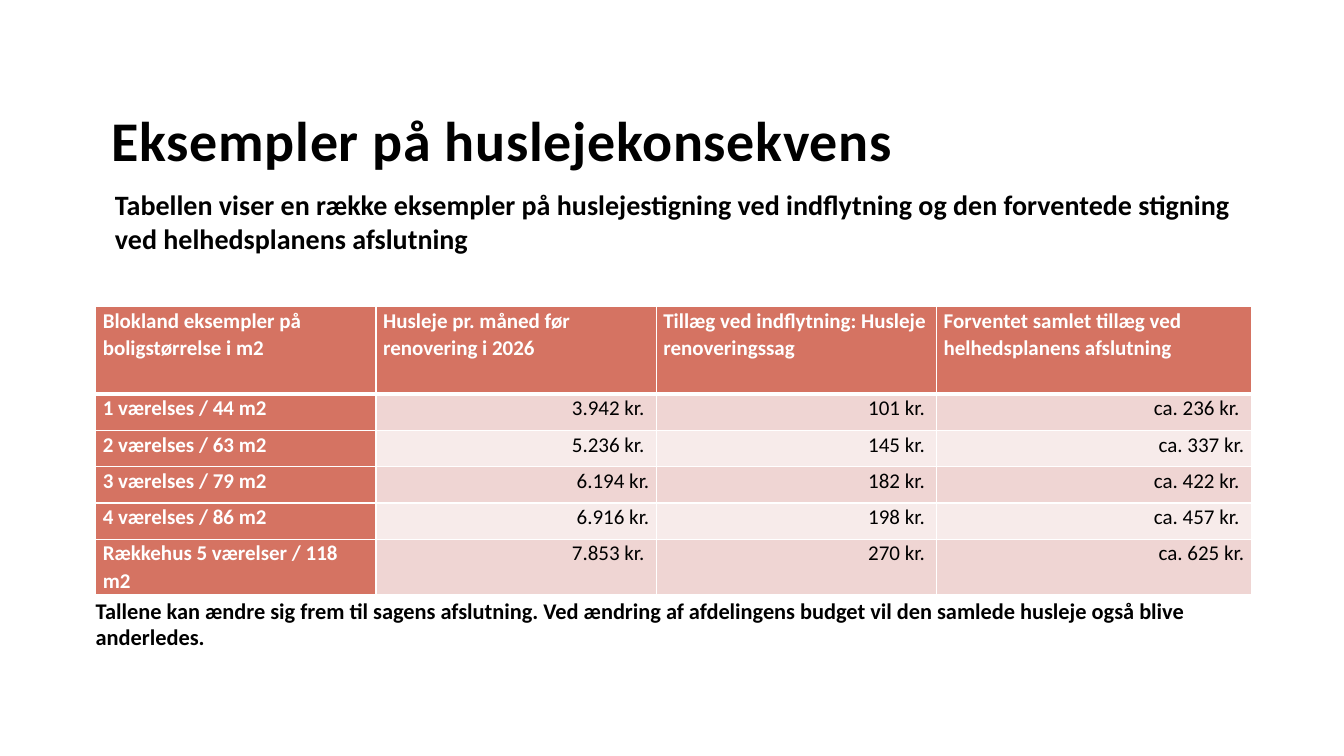
from lxml.etree import SubElement
from pptx import Presentation
from pptx.dml.color import RGBColor
from pptx.enum.text import MSO_ANCHOR, MSO_AUTO_SIZE, PP_ALIGN
from pptx.oxml.ns import qn
from pptx.util import Inches, Pt

COLORS = {"text": "000000", "white": "FFFFFF", "head": "D57362",
          "dark": "EFD5D3", "light": "F7EBEA"}
WIDTHS = [2.78, 2.78, 2.78, 3.12]
HEAD_H, ROW_H = 0.87, 0.36
ROWS = [
    ["Blokland eksempler på boligstørrelse i m2",
     "Husleje pr. måned før renovering i 2026",
     "Tillæg ved indflytning: Husleje renoveringssag",
     "Forventet samlet tillæg ved helhedsplanens afslutning"],
    ["1 værelses / 44 m2", "3.942 kr. ", "101 kr. ", "ca. 236 kr. "],
    ["2 værelses / 63 m2", "5.236 kr. ", "145 kr. ", "ca. 337 kr."],
    ["3 værelses / 79 m2", "6.194 kr.", "182 kr. ", "ca. 422 kr. "],
    ["4 værelses / 86 m2", "6.916 kr.", "198 kr. ", "ca. 457 kr. "],
    ["Rækkehus 5 værelser / 118 m2", "7.853 kr. ", "270 kr. ", "ca. 625 kr."],
]


def rgb(name):
    return RGBColor.from_string(COLORS[name])


def write(frame, text, size, color="text", bold=True, align=PP_ALIGN.LEFT,
          line=None, after=None, track=None):
    """Put one formatted paragraph into a text frame."""
    para = frame.paragraphs[0]
    para.alignment = align
    para.line_spacing = line
    if after is not None:
        para.space_after = Pt(after)
    run = para.add_run()
    run.text = text
    font = run.font
    font.name, font.size, font.bold = "Calibri", Pt(size), bold
    font.color.rgb = rgb(color)
    if track:
        run._r.get_or_add_rPr().set("spc", str(int(track * 100)))


def place(shape, left, top, width, height):
    """Position a text shape and clear its insets."""
    shape.left, shape.top = Inches(left), Inches(top)
    shape.width, shape.height = Inches(width), Inches(height)
    frame = shape.text_frame
    frame.margin_left = frame.margin_right = 0
    frame.margin_top = frame.margin_bottom = 0
    frame.word_wrap = True
    frame.auto_size = MSO_AUTO_SIZE.NONE
    frame.vertical_anchor = MSO_ANCHOR.TOP
    return frame


def add_text(slide, box, text, size):
    shape = slide.shapes.add_textbox(0, 0, 0, 0)
    write(place(shape, *box), text, size)


def add_edges(cell, top, bottom):
    """Draw white cell borders; top and bottom are widths in points."""
    props = cell._tc.get_or_add_tcPr()
    for side, width in zip("LRTB", (1, 1, top, bottom)):
        edge = SubElement(props, qn(f"a:ln{side}"), w=str(Pt(width)))
        fill = SubElement(edge, qn("a:solidFill"))
        SubElement(fill, qn("a:srgbClr"), val=COLORS["white"])


def fill_cell(cell, text, row, col):
    label = row == 0 or col == 0
    cell.margin_left = cell.margin_right = Inches(0.07)
    cell.margin_top = cell.margin_bottom = 0
    cell.vertical_anchor = MSO_ANCHOR.TOP
    add_edges(cell, 3 if row == 1 else 1, 3 if row == 0 else 1)
    cell.fill.solid()
    band = "dark" if row % 2 else "light"
    cell.fill.fore_color.rgb = rgb("head" if label else band)
    write(cell.text_frame, text, 15, color="white" if label else "text",
          bold=label, align=PP_ALIGN.LEFT if label else PP_ALIGN.RIGHT,
          line=1.07, after=8)


def add_rents(slide, left, top):
    height = HEAD_H + ROW_H * (len(ROWS) - 1)
    table = slide.shapes.add_table(
        len(ROWS), len(WIDTHS), Inches(left), Inches(top),
        Inches(sum(WIDTHS)), Inches(height)).table
    table.first_col = True
    for col, width in zip(table.columns, WIDTHS):
        col.width = Inches(width)
    for r, texts in enumerate(ROWS):
        table.rows[r].height = Inches(ROW_H if r else HEAD_H)
        for c, text in enumerate(texts):
            fill_cell(table.cell(r, c), text, r, c)


def main():
    deck = Presentation()
    deck.slide_width, deck.slide_height = Inches(13.33), Inches(7.5)
    slide = deck.slides.add_slide(deck.slide_layouts[5])
    title = place(slide.shapes.title, 1.11, 1.05, 10.94, 0.67)
    write(title, "Eksempler på huslejekonsekvens", 40, track=0.5)
    add_text(slide, (1.14, 1.86, 11.47, 0.94),
             "Tabellen viser en række eksempler på huslejestigning ved "
             "indflytning og den forventede stigning ved helhedsplanens "
             "afslutning", 20)
    add_rents(slide, 0.95, 3.04)
    add_text(slide, (0.95, 5.92, 11.47, 0.94),
             "Tallene kan ændre sig frem til sagens afslutning. Ved ændring "
             "af afdelingens budget vil den samlede husleje også blive "
             "anderledes.", 16)
    deck.save("out.pptx")


if __name__ == "__main__":
    main()
